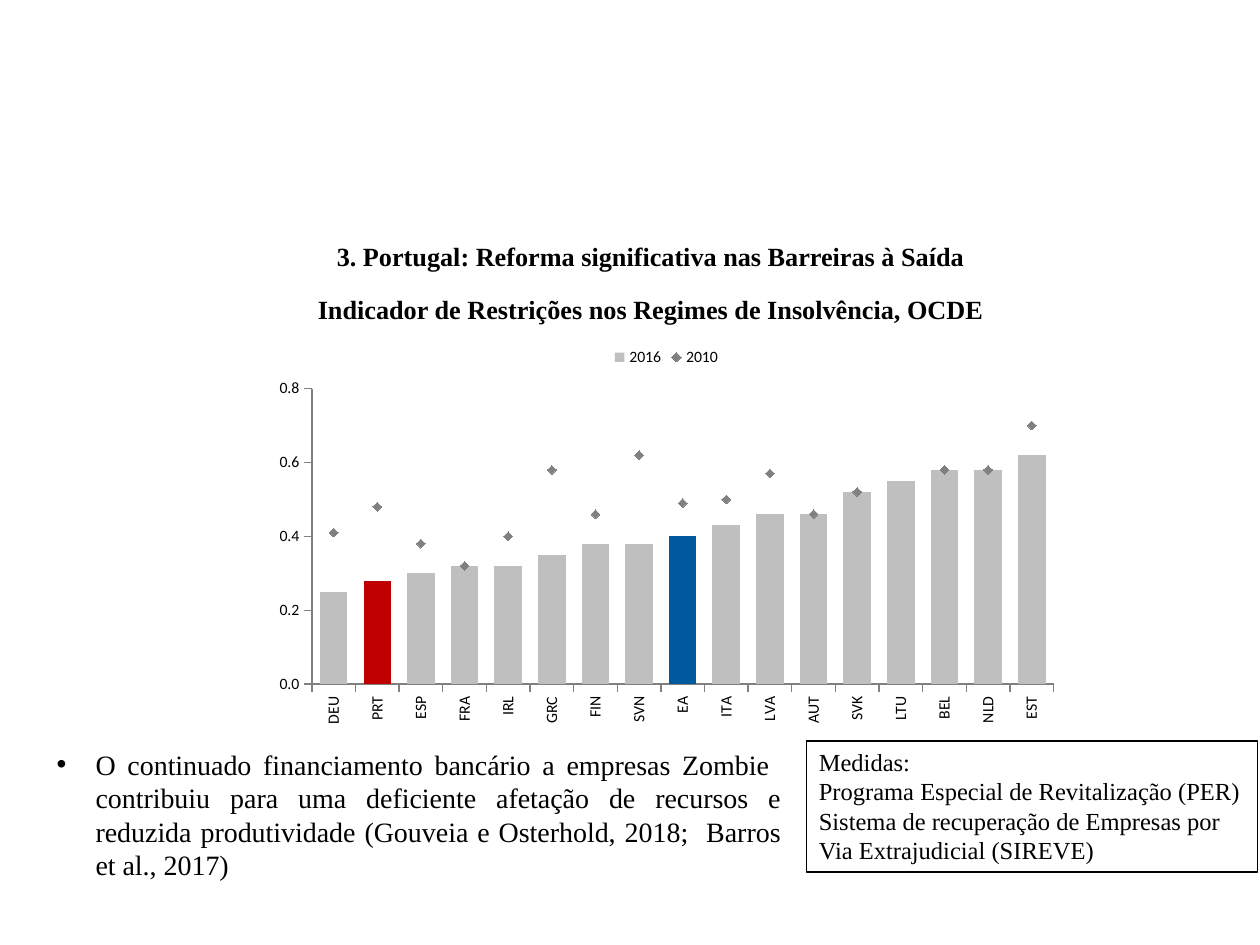
from pptx import Presentation, util as u
from pptx.chart.data import CategoryChartData
from pptx.dml.color import RGBColor
from pptx.enum import chart as ch, shapes, text
from pptx.oxml import parse_xml
from pptx.oxml.ns import nsdecls, qn
from lxml import etree

# Content
HEADING = ["3. Portugal: Reforma significativa nas Barreiras à Saída",
           "Indicador de Restrições nos Regimes de Insolvência, OCDE"]
MEASURES = ["Medidas:",
            "Programa Especial de Revitalização (PER)",
            "Sistema de recuperação de Empresas por Via Extrajudicial (SIREVE)"]
FINDING = ["O continuado financiamento bancário a empresas Zombie  contribuiu para "
           "uma deficiente afetação de recursos e reduzida produtividade "
           "(Gouveia e Osterhold, 2018;  Barros et al., 2017)"]
COUNTRIES = ("DEU PRT ESP FRA IRL GRC FIN SVN EA ITA LVA AUT SVK LTU BEL NLD EST").split()
RESTRICTIONS = {
    "2016": [0.25, 0.28, 0.3, 0.32, 0.32, 0.35, 0.38, 0.38, 0.4,
             0.43, 0.46, 0.46, 0.52, 0.55, 0.58, 0.58, 0.62],
    "2010": [0.41, 0.48, 0.38, 0.32, 0.4, 0.58, 0.46, 0.62, 0.49,
             0.5, 0.57, 0.46, 0.52, None, 0.58, 0.58, 0.7],
}
HIGHLIGHTS = {"PRT": "C00000", "EA": "00599D"}
BLACK, GREY, SILVER = "000000", "808080", "BFBFBF"

# Layout: left, top, width, height in inches
LOWER_TOP = 5.88
HEADING_BOX = (0.52, 1.86, 9.29, 0.77)
CHART_BOX = (2.09, 2.65, 6.4, 3.16)
FINDING_BOX = (0.35, LOWER_TOP, 5.95, 1.18)
MEASURES_BOX = (6.4, LOWER_TOP, 3.58, 1.04)


def color(value):
    return RGBColor.from_string(value)


def inches(box):
    return [u.Inches(side) for side in box]


def paint(fill, value):
    fill.solid()
    fill.fore_color.rgb = color(value)


def style(font, size, name, bold=False):
    font.size, font.name, font.bold = u.Pt(size), name, bold
    font.color.rgb = color(BLACK)


def write(frame, lines, size, align, bold=False, before=0, after=0, bullet=None):
    frame.word_wrap = True
    frame.auto_size = text.MSO_AUTO_SIZE.NONE
    frame.vertical_anchor = text.MSO_ANCHOR.TOP
    for i, line in enumerate(lines):
        p = frame.paragraphs[0] if i == 0 else frame.add_paragraph()
        p.alignment, p.line_spacing = align, 1.0
        p.space_before, p.space_after = u.Pt(before if i else 0), u.Pt(after)
        if bullet:
            props = p._p.get_or_add_pPr()
            indent = u.Inches(0.31)
            props.set("marL", str(indent))
            props.set("indent", str(-indent))
            etree.SubElement(props, qn("a:buFont")).set("typeface", "Arial")
            etree.SubElement(props, qn("a:buChar")).set("char", bullet)
        run = p.add_run()
        run.text = line
        style(run.font, size, "Times New Roman", bold)


def series_as_markers(chart):
    """Move the second column series to a line plot on the same axes."""
    bars = chart._chartSpace.chart.plotArea.find(qn("c:barChart"))
    moved = bars.findall(qn("c:ser"))[1]
    for flag in moved.findall(qn("c:invertIfNegative")):
        moved.remove(flag)
    lines = parse_xml(f'<c:lineChart {nsdecls("c")}><c:grouping val="standard"/>'
                      '<c:varyColors val="0"/></c:lineChart>')
    lines.append(moved)
    etree.SubElement(lines, qn("c:marker")).set("val", "1")
    for axis in bars.findall(qn("c:axId")):
        etree.SubElement(lines, qn("c:axId")).set("val", axis.get("val"))
    bars.addnext(lines)


def add_restrictions_chart(slide):
    data = CategoryChartData(number_format="0.00")
    data.categories = COUNTRIES
    for year, values in RESTRICTIONS.items():
        data.add_series(year, values)
    chart = slide.shapes.add_chart(ch.XL_CHART_TYPE.COLUMN_CLUSTERED,
                                   *inches(CHART_BOX), data).chart
    chart.has_title = False
    style(chart.font, 10, "Arial")
    series_as_markers(chart)

    # Columns for 2016, with the highlighted bars
    columns = chart.plots[0]
    columns.gap_width, columns.vary_by_categories = 58, False
    bars = columns.series[0]
    bars.invert_if_negative = False
    paint(bars.format.fill, SILVER)
    for country, shade in HIGHLIGHTS.items():
        paint(bars.points[COUNTRIES.index(country)].format.fill, shade)

    # Diamonds for 2010
    diamonds = chart.plots[1].series[0]
    diamonds.smooth = False
    diamonds.format.line.fill.background()
    diamonds.marker.style, diamonds.marker.size = ch.XL_MARKER_STYLE.DIAMOND, 5
    paint(diamonds.marker.format.fill, GREY)
    diamonds.marker.format.line.color.rgb = color(GREY)

    # Axes and legend
    for axis in (chart.category_axis, chart.value_axis):
        axis.has_major_gridlines = False
        axis.major_tick_mark = ch.XL_TICK_MARK.OUTSIDE
        axis.minor_tick_mark = ch.XL_TICK_MARK.NONE
        axis.format.line.color.rgb = color(GREY)
        style(axis.tick_labels.font, 9, "Calibri")
    labels = chart.category_axis._element.find(qn("c:txPr"))
    labels.find(qn("a:bodyPr")).set("rot", "-5400000")
    scale = chart.value_axis
    scale.minimum_scale, scale.maximum_scale, scale.major_unit = 0, 0.8, 0.2
    scale.tick_labels.number_format = "0.0"
    scale.tick_labels.number_format_is_linked = False
    chart.has_legend = True
    chart.legend.position = ch.XL_LEGEND_POSITION.TOP
    chart.legend.include_in_layout = False
    style(chart.legend.font, 9, "Calibri")


def main():
    deck = Presentation()
    deck.slide_width, deck.slide_height = u.Inches(10), u.Inches(7.5)
    slide = deck.slides.add_slide(deck.slide_layouts[5])
    paint(slide.background.fill, "FFFFFF")

    # Measures box
    measures = slide.shapes.add_shape(shapes.MSO_SHAPE.RECTANGLE, *inches(MEASURES_BOX))
    measures.shadow.inherit = False
    measures.fill.background()
    measures.line.color.rgb = color(BLACK)
    measures.line.width = u.Pt(1)
    write(measures.text_frame, MEASURES, 14, text.PP_ALIGN.LEFT)

    # Heading
    heading = slide.shapes.title
    heading.left, heading.top, heading.width, heading.height = inches(HEADING_BOX)
    write(heading.text_frame, HEADING, 15, text.PP_ALIGN.CENTER, True, before=6, after=6)

    add_restrictions_chart(slide)

    # Finding
    finding = slide.shapes.add_textbox(*inches(FINDING_BOX))
    write(finding.text_frame, FINDING, 16, text.PP_ALIGN.JUSTIFY, after=3, bullet="•")

    deck.save("out.pptx")


if __name__ == "__main__":
    main()
